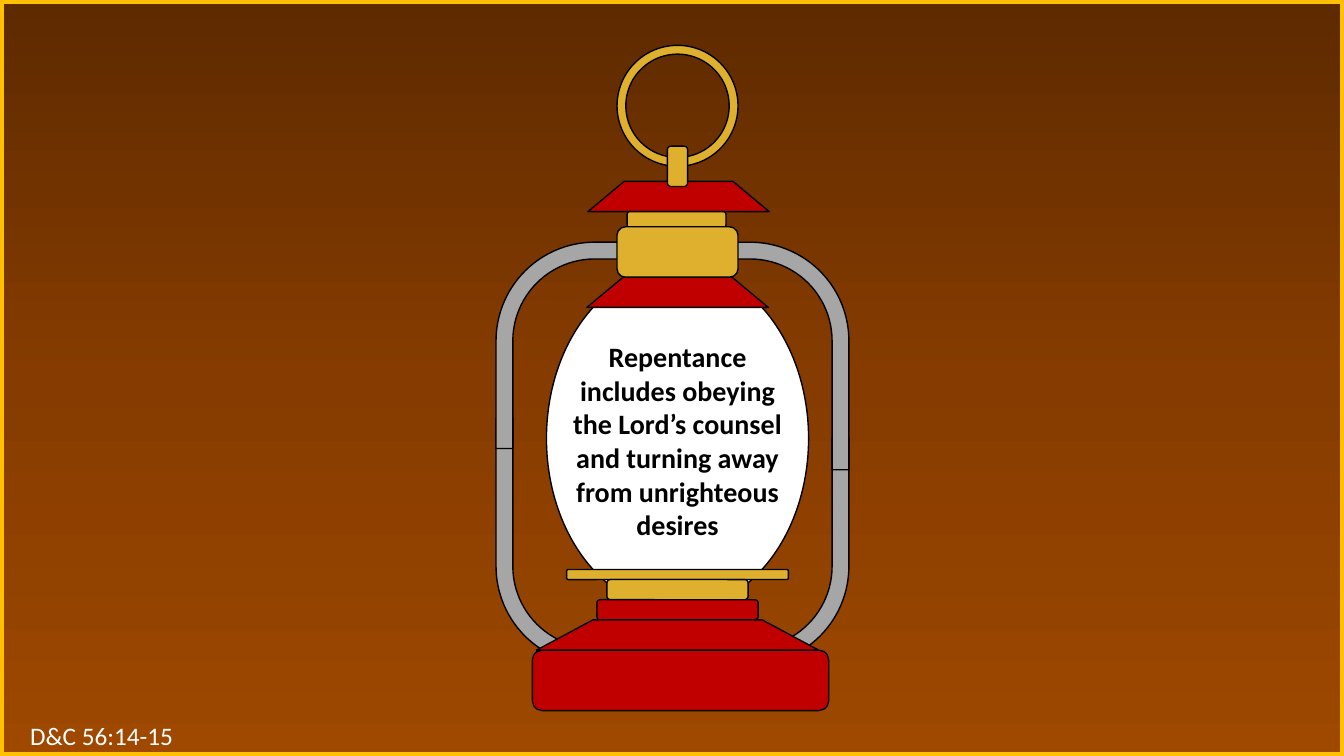
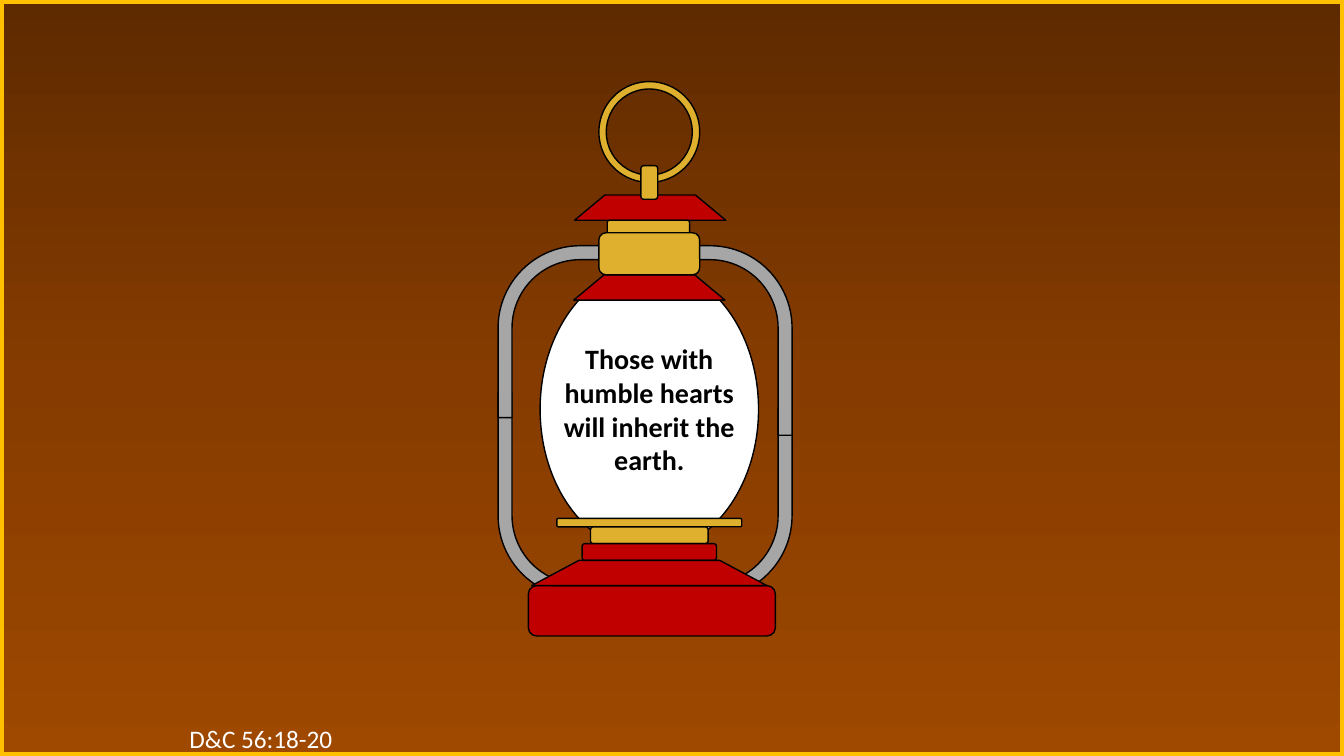
"""Build two lantern slides, each with a principle on the glass and a scripture reference."""
from copy import deepcopy
from typing import Any, NamedTuple

from pptx import Presentation
from pptx import util as u
from pptx.dml.color import RGBColor
from pptx.enum import shapes, text
from pptx.oxml import ns

BLACK = RGBColor(0x00, 0x00, 0x00)
WHITE = RGBColor(0xFF, 0xFF, 0xFF)
RED = RGBColor(0xC0, 0x00, 0x00)
BRASS = RGBColor(0xDE, 0xB0, 0x2E)
STEEL = RGBColor(0xA6, 0xA6, 0xA6)
BORDER = RGBColor(0xFF, 0xC0, 0x00)
BACKDROP_STOPS = (
    (0, RGBColor(0x5E, 0x2A, 0x00)),
    (0.5, RGBColor(0x86, 0x3C, 0x00)),
    (1, RGBColor(0x9E, 0x48, 0x00)),
)

SLIDE_WIDTH, SLIDE_HEIGHT = u.Inches(13.33), u.Inches(7.5)
KIND = shapes.MSO_SHAPE
HANDLE_BEND = (0.098, 0.139, 0.119, 0.576)
REFERENCE_FORMAT = {"name": "Calibri", "size": u.Pt(18)}
PRINCIPLE_FORMAT = {"name": "Calibri", "size": u.Pt(20), "bold": True}


class Part(NamedTuple):
    """A lantern part, placed in columns and rows of the lantern's grid."""

    kind: shapes.MSO_SHAPE
    column: float
    row: float
    columns: float
    rows: float
    color: RGBColor
    rotation: int = 0
    flips: tuple[str, ...] = ()
    adjustments: tuple[float, ...] = ()


class Lantern(NamedTuple):
    """A slide's lantern and texts; left, top and cell are in inches, rows in cells."""

    left: float
    top: float
    cell: float
    principle: str
    principle_row: float
    principle_rows: float
    reference: str
    reference_left: float
    reference_top: float


def handle(column: float, row: float, rows: float, *flips: str) -> Part:
    """Return one quarter of the steel handle."""
    return Part(KIND.BENT_ARROW, column, row, 17, rows, STEEL, flips=flips, adjustments=HANDLE_BEND)


def cone(column: float, row: float, columns: float) -> Part:
    """Return a red cone that widens downwards."""
    return Part(KIND.FLOWCHART_MANUAL_OPERATION, column, row, columns, 3, RED, rotation=180)


def block(column: float, row: float, columns: float, rows: float, color: RGBColor, rotation: int = 0) -> Part:
    """Return a rounded block."""
    return Part(KIND.ROUNDED_RECTANGLE, column, row, columns, rows, color, rotation)


LANTERN_PARTS = (
    handle(18, 38.9, 24.1, "flipH", "flipV"),
    handle(18, 18, 24.1, "flipH"),
    handle(0, 37, 26, "flipV"),
    handle(0, 18, 22),
    Part(KIND.OVAL, 5, 22, 26, 34, WHITE),
    cone(9, 23, 18),
    cone(9.1, 13.5, 18),
    block(13, 16.5, 9.8, 1.6, BRASS),
    block(12, 18, 12, 5, BRASS),
    Part(KIND.DONUT, 12, 0, 12, 12, BRASS, adjustments=(0.073,)),
    block(16, 11, 4, 2, BRASS, rotation=270),
    block(7, 52, 22, 1, BRASS),
    block(3.6, 60, 29.4, 6, RED),
    block(11, 53, 14, 2, BRASS),
    block(10, 55, 16, 2, RED),
    cone(4, 57, 28),
)

LANTERNS = (
    Lantern(
        4.92, 0.45, 0.1,
        "Repentance includes obeying the Lord’s counsel and turning away from unrighteous desires",
        28.7, 21.2, "D&C 56:14-15", 0.2, 7.1,
    ),
    Lantern(
        4.94, 0.81, 1 / 12,
        "Those with humble hearts will inherit the earth.",
        30.4, 17.4, "D&C 56:18-20", 1.78, 7.13,
    ),
)


def set_outline(shape: Any, color: RGBColor, points: float) -> None:
    """Give a shape a plain outline and no shadow."""
    shape.shadow.inherit = False
    shape.line.color.rgb = color
    shape.line.width = u.Pt(points)


def add_backdrop(slide: Any) -> None:
    """Fill the slide with the bordered brown gradient."""
    shape = slide.shapes.add_shape(KIND.RECTANGLE, 0, 0, SLIDE_WIDTH, SLIDE_HEIGHT)
    set_outline(shape, BORDER, 6)
    shape.fill.gradient()
    shape.fill.gradient_angle = 270
    stop_list = shape.element.spPr.find(".//" + ns.qn("a:gsLst"))
    stop_list.append(deepcopy(stop_list[-1]))
    for stop, (position, color) in zip(shape.fill.gradient_stops, BACKDROP_STOPS):
        stop.position = position
        stop.color.rgb = color


def add_text(owner: Any, box: tuple[int, ...], words: str, color: RGBColor,
             alignment: text.PP_ALIGN, formats: dict[str, Any]) -> None:
    """Add a wrapped text box with one formatted paragraph."""
    frame = owner.shapes.add_textbox(*box).text_frame
    frame.word_wrap = True
    frame.auto_size = text.MSO_AUTO_SIZE.SHAPE_TO_FIT_TEXT
    paragraph = frame.paragraphs[0]
    paragraph.alignment = alignment
    run = paragraph.add_run()
    run.text = words
    run.font.color.rgb = color
    for name, value in formats.items():
        setattr(run.font, name, value)


def grid_box(lantern: Lantern, column: float, row: float, columns: float, rows: float) -> tuple[int, ...]:
    """Turn grid cells into left, top, width and height."""
    cell = lantern.cell
    lengths = (lantern.left + column * cell, lantern.top + row * cell, columns * cell, rows * cell)
    return tuple(u.Inches(length) for length in lengths)


def add_part(group: Any, lantern: Lantern, part: Part) -> None:
    """Draw one part of the lantern."""
    box = grid_box(lantern, part.column, part.row, part.columns, part.rows)
    shape = group.shapes.add_shape(part.kind, *box)
    set_outline(shape, BLACK, 1)
    shape.fill.solid()
    shape.fill.fore_color.rgb = part.color
    shape.rotation = part.rotation
    for flip in part.flips:
        shape.element.spPr.xfrm.set(flip, "1")
    for index, value in enumerate(part.adjustments):
        shape.adjustments[index] = value


def add_lantern_slide(presentation: Any, lantern: Lantern) -> None:
    """Add a slide with backdrop, reference and lantern."""
    slide = presentation.slides.add_slide(presentation.slide_layouts[6])
    add_backdrop(slide)
    reference_box = tuple(
        u.Inches(length) for length in (lantern.reference_left, lantern.reference_top, 3.54, 0.4)
    )
    add_text(slide, reference_box, lantern.reference, WHITE, text.PP_ALIGN.LEFT, REFERENCE_FORMAT)
    group = slide.shapes.add_group_shape()
    for part in LANTERN_PARTS:
        add_part(group, lantern, part)
    principle_box = grid_box(lantern, 5.5, lantern.principle_row, 25, lantern.principle_rows)
    add_text(group, principle_box, lantern.principle, BLACK, text.PP_ALIGN.CENTER, PRINCIPLE_FORMAT)


def main() -> None:
    """Build and save the presentation."""
    presentation = Presentation()
    presentation.slide_width, presentation.slide_height = SLIDE_WIDTH, SLIDE_HEIGHT
    for lantern in LANTERNS:
        add_lantern_slide(presentation, lantern)
    presentation.save("out.pptx")


if __name__ == "__main__":
    main()
